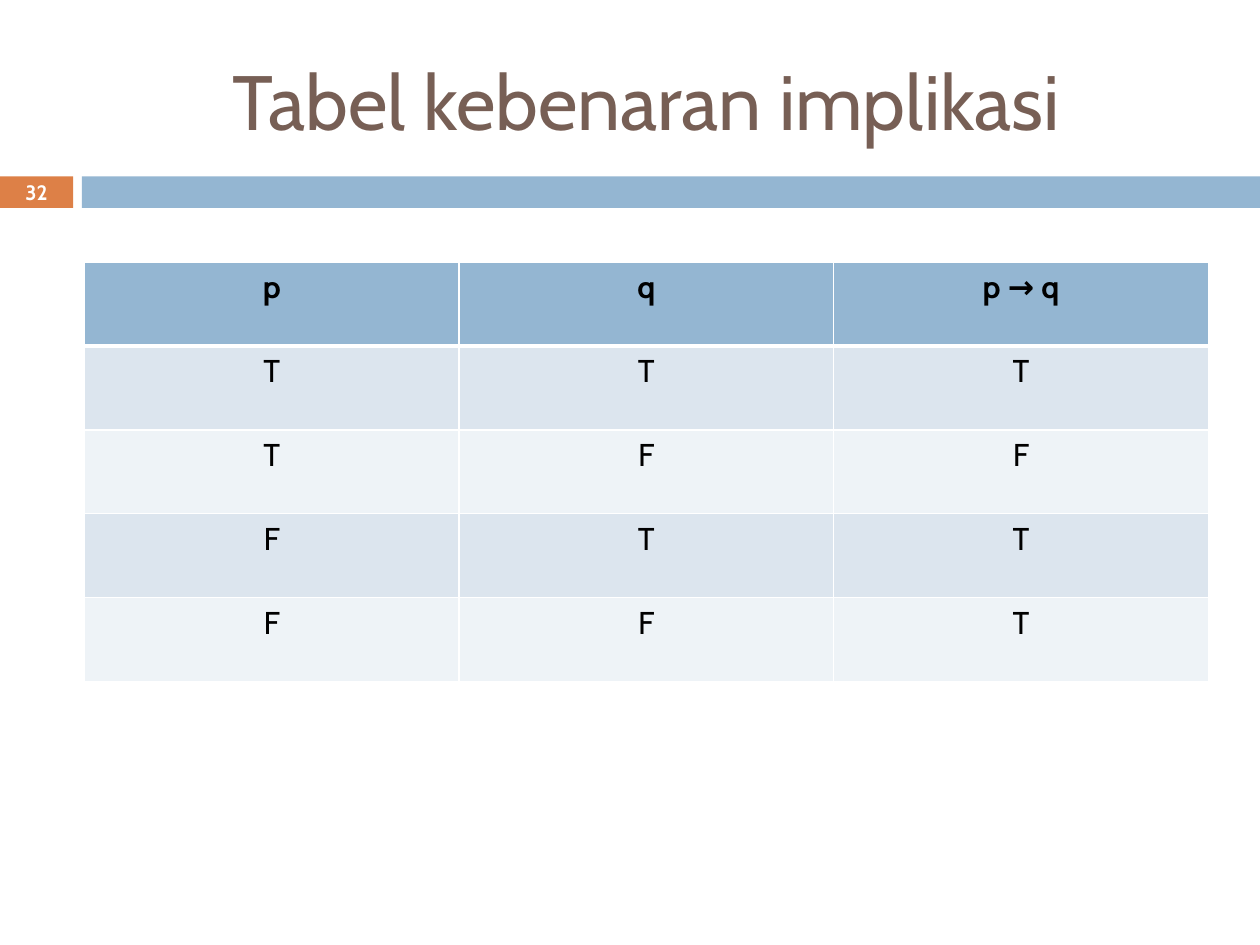
"""Build a slide with the truth table of the implication."""
import lxml.etree
import pptx
import pptx.dml.color
import pptx.enum.shapes
import pptx.enum.text
import pptx.oxml.ns
import pptx.util

Inches = pptx.util.Inches
Pt = pptx.util.Pt
RGBColor = pptx.dml.color.RGBColor
qn = pptx.oxml.ns.qn

ORANGE = RGBColor(0xDD, 0x80, 0x47)
BLUE = RGBColor(0x94, 0xB6, 0xD2)
BAND_DARK = RGBColor(0xDC, 0xE5, 0xEE)
BAND_LIGHT = RGBColor(0xEE, 0xF3, 0xF7)
BROWN = RGBColor(0x77, 0x5F, 0x55)
WHITE = RGBColor(0xFF, 0xFF, 0xFF)
BLACK = RGBColor(0, 0, 0)

ROWS = [
    ("p", "q", "p → q"),
    ("T", "T", "T"),
    ("T", "F", "F"),
    ("F", "T", "T"),
    ("F", "F", "T"),
]


def write(tf, text, size, color, bold=False):
    p = tf.paragraphs[0]
    p.alignment = pptx.enum.text.PP_ALIGN.CENTER
    r = p.add_run()
    r.text = text
    r.font.name = "Cabin"
    r.font.size = Pt(size)
    r.font.bold = bold
    r.font.color.rgb = color


def add_border(cell, side, width):
    ln = lxml.etree.SubElement(cell._tc.get_or_add_tcPr(), qn(f"a:ln{side}"), w=str(Pt(width)))
    fill = lxml.etree.SubElement(ln, qn("a:solidFill"))
    lxml.etree.SubElement(fill, qn("a:srgbClr"), val=str(WHITE))


prs = pptx.Presentation()
prs.slide_width = Inches(10)
prs.slide_height = Inches(7.5)
s = prs.slides.add_slide(prs.slide_layouts[6])

for left, width, color in [(0, 0.58, ORANGE), (0.65, 9.35, BLUE)]:
    sp = s.shapes.add_shape(
        pptx.enum.shapes.MSO_SHAPE.RECTANGLE,
        Inches(left), Inches(1.4), Inches(width), Inches(0.25),
    )
    sp.shadow.inherit = False
    sp.fill.solid()
    sp.fill.fore_color.rgb = color
    sp.line.fill.background()

for left, top, width, height, text, size, color, bold in [
    (0.67, 0.25, 8.92, 1.08, "Tabel kebenaran implikasi", 44, BROWN, False),
    (0, 1.39, 0.58, 0.27, "32", 11.9, WHITE, True),
]:
    sp = s.shapes.add_textbox(Inches(left), Inches(top), Inches(width), Inches(height))
    tf = sp.text_frame
    tf.word_wrap = True
    tf.vertical_anchor = pptx.enum.text.MSO_ANCHOR.MIDDLE
    tf.margin_top = tf.margin_bottom = 0
    write(tf, text, size, color, bold)

table = s.shapes.add_table(
    len(ROWS), len(ROWS[0]), Inches(0.67), Inches(2.08), Inches(8.92), Inches(3.33)
).table
for i, row in enumerate(ROWS):
    for j, text in enumerate(row):
        cell = table.cell(i, j)
        for side in "LRTB":
            thick = (i, side) in [(0, "B"), (1, "T")]
            add_border(cell, side, 3 if thick else 1)
        cell.fill.solid()
        cell.fill.fore_color.rgb = BLUE if i == 0 else BAND_DARK if i % 2 else BAND_LIGHT
        write(cell.text_frame, text, 18, BLACK, i == 0)

prs.save("out.pptx")
